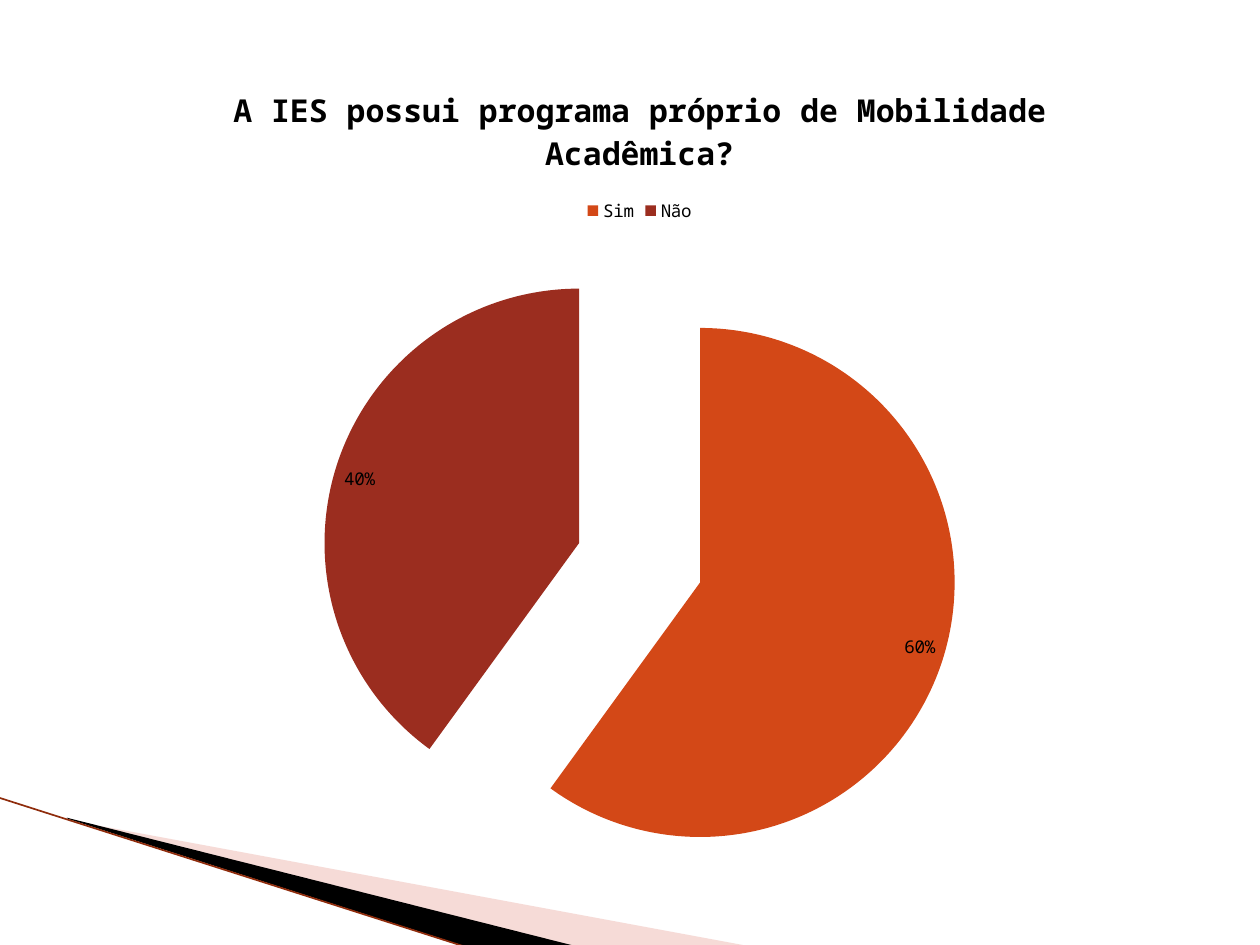
"""Build the academic mobility pie chart slide."""
from dataclasses import dataclass

from lxml import etree
from pptx import Presentation
from pptx.chart.data import CategoryChartData
from pptx.dml.color import RGBColor
from pptx.enum.chart import XL_CHART_TYPE, XL_LABEL_POSITION, XL_LEGEND_POSITION
from pptx.enum.shapes import MSO_CONNECTOR
from pptx.oxml.ns import qn
from pptx.util import Pt

PIE = XL_CHART_TYPE.PIE_EXPLODED
LEGEND_TOP = XL_LEGEND_POSITION.TOP
INSIDE_END = XL_LABEL_POSITION.INSIDE_END
STRAIGHT = MSO_CONNECTOR.STRAIGHT

BLACK = RGBColor(0x00, 0x00, 0x00)
WHITE = RGBColor(0xFF, 0xFF, 0xFF)
PINK = RGBColor(0xE9, 0xA5, 0x9D)
BROWN = RGBColor(0x8F, 0x2C, 0x0C)
ORANGE = RGBColor(0xD3, 0x48, 0x17)
RED = RGBColor(0x9B, 0x2D, 0x1F)
FONT = "Noto Sans Mono"
TITLE = "A IES possui programa próprio de Mobilidade Acadêmica?"


@dataclass
class Wedge:
    points: list[tuple[float, float]]
    color: RGBColor
    opacity: int = 100


@dataclass
class Answer:
    label: str
    value: int
    color: RGBColor


WEDGES = [
    Wedge([(39.6, 468.7), (428.4, 540.7), (328.3, 540.7), (39.6, 468)], PINK, 40),
    Wedge([(38.2, 467.3), (329, 540.7), (267.8, 541.4), (38.9, 468)], BLACK),
]
ANSWERS = [Answer("Sim", 60, ORANGE), Answer("Não", 40, RED)]


def draw_wedge(shapes, wedge: Wedge) -> None:
    start, *rest = [(Pt(x), Pt(y)) for x, y in wedge.points]
    builder = shapes.build_freeform(*start)
    builder.add_line_segments(rest)
    sp = builder.convert_to_shape()
    sp.shadow.inherit = False
    sp.line.fill.background()
    sp.fill.solid()
    sp.fill.fore_color.rgb = wedge.color
    if wedge.opacity < 100:
        clr = sp.fill._xPr.find(f".//{qn('a:srgbClr')}")
        etree.SubElement(clr, qn("a:alpha"), val=str(wedge.opacity * 1000))


def draw_edge(shapes) -> None:
    line = shapes.add_connector(STRAIGHT, Pt(-0.7), Pt(455.8), Pt(267.1), Pt(541.4))
    line.line.color.rgb = BROWN
    line.line.width = Pt(0.95)
    etree.SubElement(line._element.spPr, qn("a:effectLst"))


def draw_chart(shapes, answers: list[Answer]) -> None:
    data = CategoryChartData()
    data.categories = [a.label for a in answers]
    data.add_series("Series 1", [a.value for a in answers])
    chart = shapes.add_chart(PIE, Pt(31), Pt(31.7), Pt(669), Pt(481.7), data).chart
    chart.font.name = FONT
    chart.font.size = Pt(10)
    chart.font.color.rgb = BLACK

    chart.has_title = True
    tf = chart.chart_title.text_frame
    tf.text = TITLE
    font = tf.paragraphs[0].font
    font.name, font.size, font.bold = FONT, Pt(18), True
    font.color.rgb = BLACK
    chart.chart_title.include_in_layout = False

    chart.has_legend = True
    chart.legend.position = LEGEND_TOP
    chart.legend.include_in_layout = False

    plot = chart.plots[0]
    plot.vary_by_categories = True
    plot.has_data_labels = True
    labels = plot.data_labels
    labels.show_percentage = True
    labels.show_value = False
    labels.number_format = "0%"
    labels.number_format_is_linked = False
    labels.position = INSIDE_END

    series = plot.series[0]
    for i, answer in enumerate(answers):
        fmt = series.points[i].format
        fmt.fill.solid()
        fmt.fill.fore_color.rgb = answer.color
        fmt.line.fill.background()
    ser = series._element
    for old in ser.findall(qn("c:explosion")):
        ser.remove(old)
    explosion = etree.Element(qn("c:explosion"), val="25")
    ser.find(qn("c:dPt")).addprevious(explosion)


def main() -> None:
    prs = Presentation()
    prs.slide_width, prs.slide_height = Pt(720), Pt(540)
    s = prs.slides.add_slide(prs.slide_layouts[6])
    s.background.fill.solid()
    s.background.fill.fore_color.rgb = WHITE
    for wedge in WEDGES:
        draw_wedge(s.shapes, wedge)
    draw_edge(s.shapes)
    draw_chart(s.shapes, ANSWERS)
    prs.save("out.pptx")


if __name__ == "__main__":
    main()
